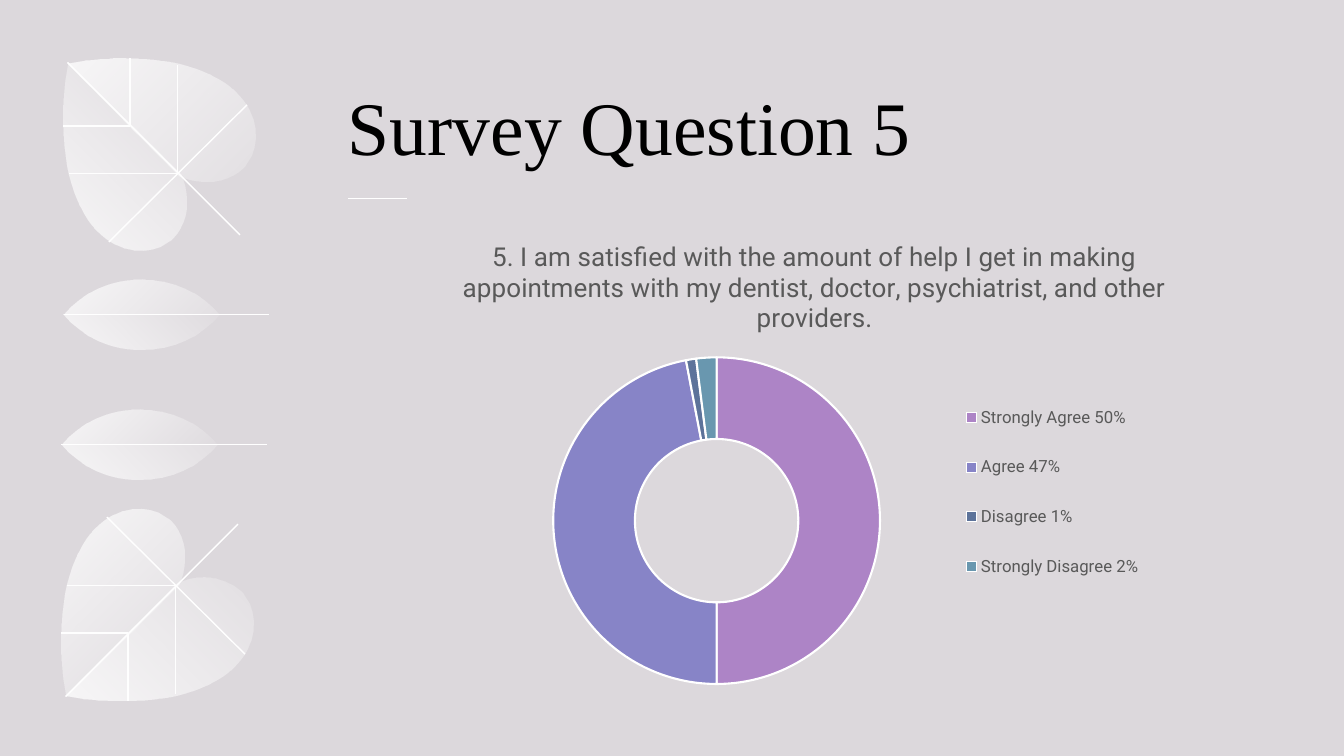
from lxml import etree
from pptx import Presentation
from pptx.chart.data import CategoryChartData
from pptx.dml.color import RGBColor
from pptx.enum.chart import XL_CHART_TYPE, XL_LEGEND_POSITION
from pptx.enum.shapes import MSO_CONNECTOR
from pptx.enum.text import MSO_ANCHOR, PP_ALIGN
from pptx.oxml.ns import qn
from pptx.util import Inches, Pt

DOUGHNUT = XL_CHART_TYPE.DOUGHNUT
LEGEND_RIGHT = XL_LEGEND_POSITION.RIGHT
STRAIGHT = MSO_CONNECTOR.STRAIGHT
BACKGROUND = RGBColor(0xDC, 0xD8, 0xDC)
WHITE = RGBColor(0xFF, 0xFF, 0xFF)
BLACK = RGBColor(0x00, 0x00, 0x00)
GRAY = RGBColor(0x59, 0x59, 0x59)
ANSWERS = [
    ("Strongly Agree 50%", 50, RGBColor(0xAD, 0x84, 0xC6)),
    ("Agree 47%", 47, RGBColor(0x87, 0x84, 0xC7)),
    ("Disagree 1%", 1, RGBColor(0x5D, 0x73, 0x9A)),
    ("Strongly Disagree 2%", 2, RGBColor(0x69, 0x97, 0xAF)),
]
QUESTION = ("5. I am satisfied with the amount of help I get in making appointments "
            "with my dentist, doctor, psychiatrist, and other providers.")
LEFT, WIDTH = 3.45, 9.26

prs = Presentation()
prs.slide_width, prs.slide_height = Inches(13.33), Inches(7.5)
s = prs.slides.add_slide(prs.slide_layouts[5])
s.background.fill.solid()
s.background.fill.fore_color.rgb = BACKGROUND


def add_line(start, end):
    line = s.shapes.add_connector(STRAIGHT, *[Inches(v) for v in (*start, *end)])
    line.line.color.rgb = WHITE
    line.line.width = Pt(1)
    etree.SubElement(line._element.spPr, qn("a:effectLst"))


def set_layout(parent, index, x, y, w, h):
    for old in parent.findall(qn("c:layout")):
        parent.remove(old)
    layout = etree.Element(qn("c:layout"))
    manual = etree.SubElement(layout, qn("c:manualLayout"))
    if parent.tag == qn("c:plotArea"):
        etree.SubElement(manual, qn("c:layoutTarget")).set("val", "inner")
    for tag, val in [("xMode", "edge"), ("yMode", "edge"),
                     ("x", x), ("y", y), ("w", w), ("h", h)]:
        etree.SubElement(manual, qn("c:" + tag)).set("val", str(val))
    parent.insert(index, layout)


# Leaf halves: a start point, then one point per line or three per Bézier curve
heart = [[(0.67, 0.63)], [(1.78, 1.74)], [(1.89, 1.78)],
         [(2.12, 1.83), (2.29, 1.77), (2.41, 1.66)],
         [(2.42, 1.65), (2.44, 1.63), (2.45, 1.61)],
         [(2.73, 1.24), (2.39, 0.44), (0.85, 0.6)]]
blade = [[(0.63, 3.12)], [(0.82, 2.9), (1.09, 2.77), (1.41, 2.77)],
         [(1.71, 2.77), (1.99, 2.9), (2.18, 3.12)]]
halves = [
    (heart, 315, 20),
    ([[(y + 0.05, x - 0.05) for x, y in seg] for seg in heart], 45, 10),
    (blade, 315, 20),
    ([[(x, 6.24 - y) for x, y in seg] for seg in blade], 45, 10),
]
veins = [((0.67, 0.62), (2.38, 2.33)), ((2.45, 1.04), (1.08, 2.4))]
bent_veins = [[(0.68, 1.72), (1.76, 1.72), (1.76, 0.64)],
              [(0.63, 1.25), (1.29, 1.25), (1.29, 0.58)]]
stem = ((0.63, 3.12), (2.67, 3.12))

# The lower pair of leaves mirrors the upper pair
for shift, base, sign in [(0, 0, 1), (-0.02, 7.53, -1)]:
    def place(point):
        return point[0] + shift, base + sign * point[1]

    for start, end in veins:
        add_line(place(start), place(end))

    outlines = [([[p] for p in vein], None, None) for vein in bent_veins] + halves
    for segments, angle, end_alpha in outlines:
        points = [[Inches(v) for v in place(p)] for seg in segments for p in seg]
        fb = s.shapes.build_freeform(*points[0])
        fb.add_line_segments(points[1:], close=angle is not None)
        sp = fb.convert_to_shape()
        sp.shadow.inherit = False
        if angle is None:
            sp.fill.background()
            sp.line.color.rgb = WHITE
            sp.line.width = Pt(1)
            continue

        # Join each run of three points into one curve
        steps = iter(list(sp._element.iter(qn("a:lnTo"))))
        for seg in segments[1:]:
            group = [next(steps) for _ in seg]
            if len(seg) == 3:
                curve = etree.Element(qn("a:cubicBezTo"))
                group[0].addprevious(curve)
                for step in group:
                    curve.append(step[0])
                    step.getparent().remove(step)

        # White fading out
        sp.line.fill.background()
        sp.fill.gradient()
        sp.fill.gradient_angle = angle if sign == 1 else 360 - angle
        for position, stop in enumerate(sp.fill.gradient_stops):
            stop.position = position
            stop.color.rgb = WHITE
        for color, alpha in zip(sp._element.spPr.iter(qn("a:srgbClr")), (80, end_alpha)):
            etree.SubElement(color, qn("a:alpha")).set("val", str(alpha * 1000))
    add_line(place(stem[0]), place(stem[1]))

# Title and its rule
add_line((LEFT, 1.97), (4.04, 1.97))
title = s.shapes.title
title.left, title.top, title.width, title.height = map(Inches, (LEFT, 0.44, WIDTH, 1.3))
tf = title.text_frame
tf.text = "Survey Question 5"
tf.word_wrap = True
tf.vertical_anchor = MSO_ANCHOR.BOTTOM
tf.margin_left = 0
p = tf.paragraphs[0]
p.alignment = PP_ALIGN.LEFT
font = p.runs[0].font
font.name, font.size, font.color.rgb = "Times New Roman", Pt(54), BLACK

# Doughnut chart of the answers
data = CategoryChartData()
data.categories = [name for name, _, _ in ANSWERS]
data.add_series(QUESTION, [value for _, value, _ in ANSWERS])
chart = s.shapes.add_chart(DOUGHNUT, Inches(LEFT), Inches(2.18),
                           Inches(WIDTH), Inches(4.74), data).chart
chart.font.name, chart.font.size = "Roboto", Pt(10)
chart.font.color.rgb = BLACK
chart.has_title = True
chart.chart_title.include_in_layout = False
chart.chart_title.text_frame.text = QUESTION
font = chart.chart_title.text_frame.paragraphs[0].runs[0].font
font.name, font.size, font.bold, font.color.rgb = "Roboto", Pt(18.6), False, GRAY

plot = chart.plots[0]
plot.vary_by_categories = True
plot.has_data_labels = False
plot._element.find(qn("c:holeSize")).set("val", "75")
for i, (_, _, color) in enumerate(ANSWERS):
    fmt = plot.series[0].points[i].format
    fmt.fill.solid()
    fmt.fill.fore_color.rgb = color
    fmt.line.color.rgb = WHITE
    fmt.line.width = Pt(1.5)

chart.has_legend = True
legend = chart.legend
legend.position = LEGEND_RIGHT
legend.include_in_layout = False
legend.font.name, legend.font.size = "Roboto", Pt(12)
legend.font.color.rgb = GRAY
set_layout(legend._element, 1, 0.64, 0.33, 0.23, 0.48)
set_layout(plot._element.getparent(), 0, 0.22, 0.28, 0.35, 0.7)

prs.save("out.pptx")
